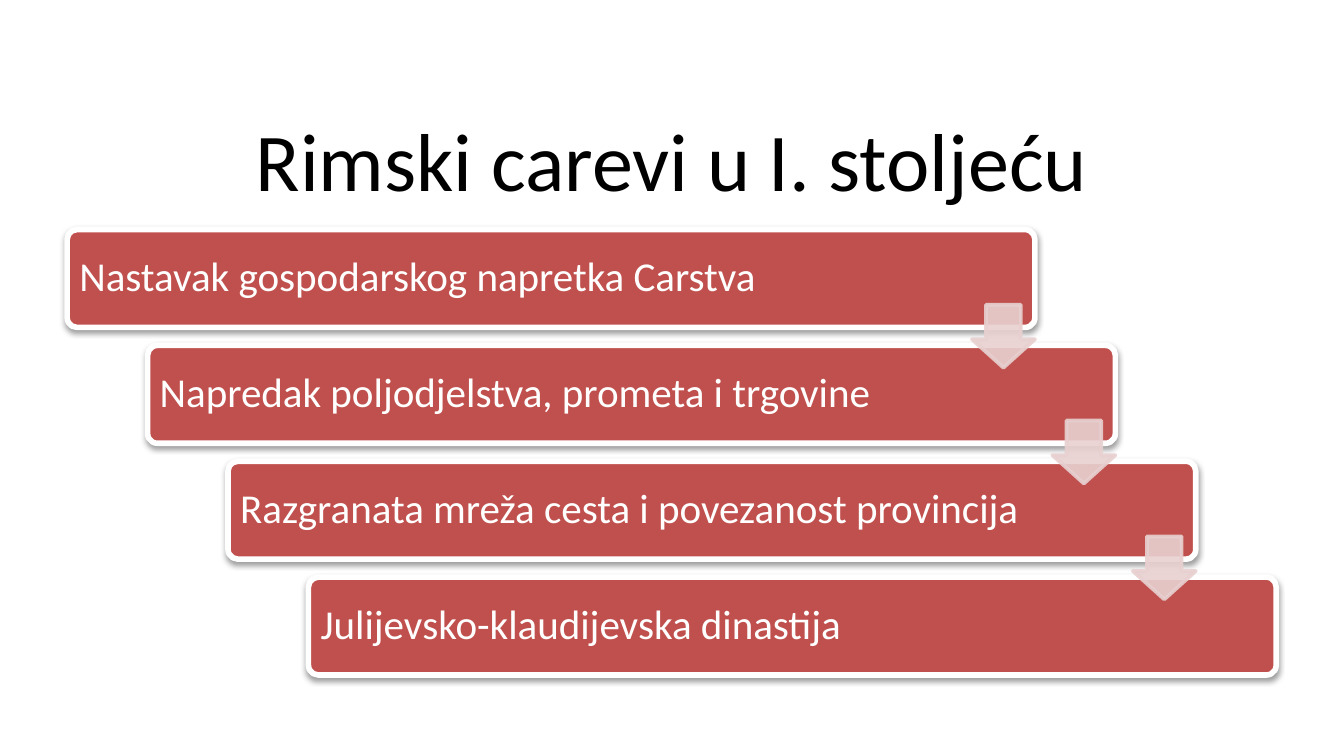
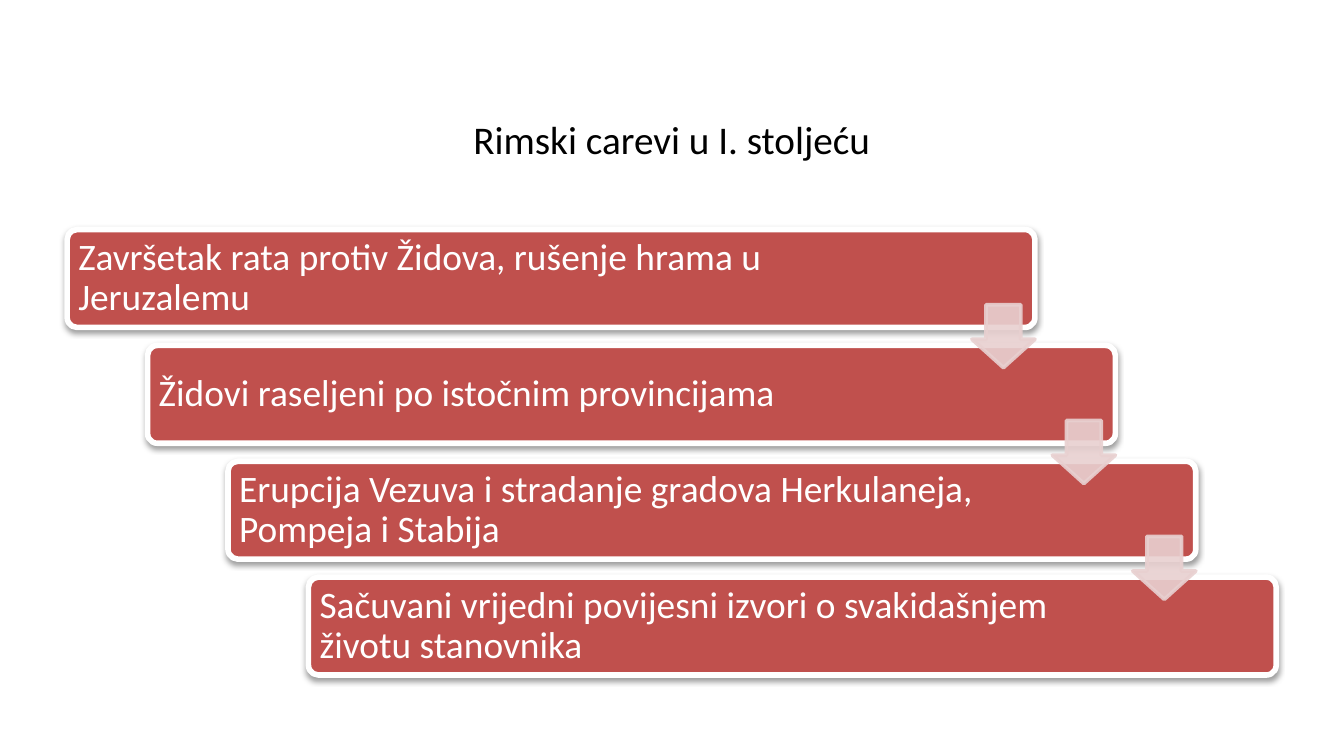
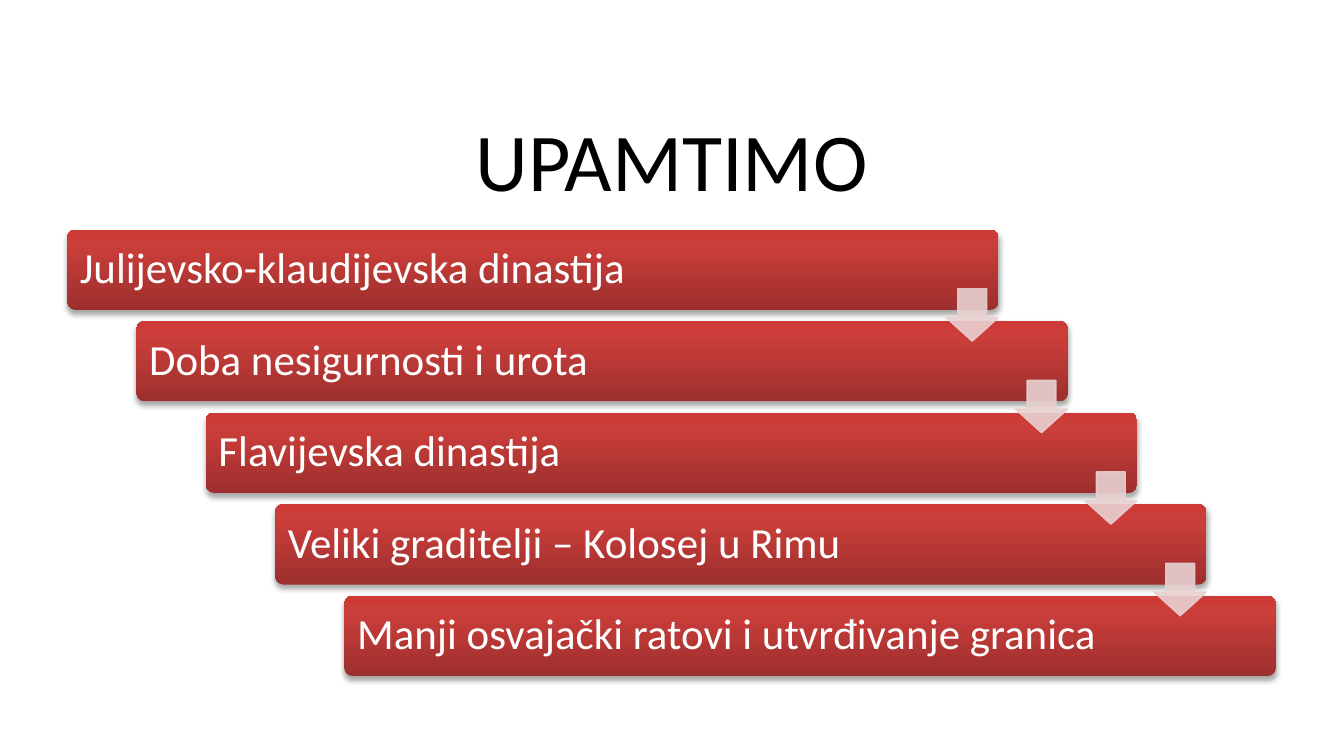
from copy import deepcopy

from lxml import etree
from pptx import Presentation
from pptx import util as u
from pptx.dml.color import RGBColor
from pptx.enum import shapes, text
from pptx.oxml.ns import qn

# Theme: colours, font and type sizes
THEME = {
    "font": "Calibri",
    "black": RGBColor.from_string("000000"),
    "white": RGBColor.from_string("FFFFFF"),
    "card": RGBColor.from_string("C0504D"),
    "arrow": RGBColor.from_string("E8D0D0"),
    "gradient": [(0, "9C2F2D"), (0.8, "CB3E3A"), (1, "CE3B37")],
    "title": 44,
    "small_title": 21,
}
LEFT, TOP = 1.27, 4.34

# Staircase styles (lengths in cm, line widths and shadows in points)
FRAMED = {
    "w": 18.29, "h": 1.85, "dx": 1.52, "dy": 2.19, "first_w": 16.23, "text_w": 15.56,
    "arrow": 1.19, "arrow_dy": 1.42, "arrow_line": 2,
    "gradient": False, "shadow_alpha": 38, "shadow_dist": 1.6,
}
GLOSSY = {
    "w": 17.6, "h": 1.52, "dx": 1.31, "dy": 1.73, "first_w": 15.88, "text_w": 15.29,
    "arrow": 0.99, "arrow_dy": 1.12, "arrow_line": 0.75,
    "gradient": True, "shadow_alpha": 35, "shadow_dist": 1.8,
}

# Slides: title, title size, space under the title, style, step size, step inset, steps
SLIDES = [
    ("Rimski carevi u I. stoljeću", THEME["title"], 0.13, FRAMED, 22, 0.23, [
        "Nastavak gospodarskog napretka Carstva",
        "Napredak poljodjelstva, prometa i trgovine",
        "Razgranata mreža cesta i povezanost provincija",
        "Julijevsko-klaudijevska dinastija",
    ]),
    ("Rimski carevi u I. stoljeću", THEME["small_title"], 0.99, FRAMED, 20, 0.21, [
        "Završetak rata protiv Židova, rušenje hrama u Jeruzalemu",
        "Židovi raseljeni po istočnim provincijama",
        "Erupcija Vezuva i stradanje gradova Herkulaneja, Pompeja i Stabija",
        "Sačuvani vrijedni povijesni izvori o svakidašnjem životu stanovnika",
    ]),
    ("UPAMTIMO", THEME["title"], 0.13, GLOSSY, 23, 0.24, [
        "Julijevsko-klaudijevska dinastija",
        "Doba nesigurnosti i urota",
        "Flavijevska dinastija",
        "Veliki graditelji – Kolosej u Rimu",
        "Manji osvajački ratovi i utvrđivanje granica",
    ]),
]


def add_text(s, box, words, size, color, align, insets):
    tf = s.shapes.add_textbox(*map(u.Cm, box)).text_frame
    tf.word_wrap = True
    tf.vertical_anchor = text.MSO_ANCHOR.MIDDLE
    tf.margin_left, tf.margin_top, tf.margin_right, tf.margin_bottom = map(u.Cm, insets)
    p = tf.paragraphs[0]
    p.text = words
    p.alignment = align
    p.line_spacing = 0.9
    r = p.runs[0]
    r.font.name = THEME["font"]
    r.font.size = u.Pt(size)
    r.font.color.rgb = color


def add_plain(s, kind, box, adjustments, color):
    sp = s.shapes.add_shape(kind, *map(u.Cm, box))
    sp.shadow.inherit = False
    for i, value in enumerate(adjustments):
        sp.adjustments[i] = value
    sp.fill.solid()
    sp.fill.fore_color.rgb = color
    return sp


prs = Presentation()
prs.slide_width, prs.slide_height = u.Cm(25.4), u.Cm(14.29)

for title, title_size, title_gap, style, size, inset, steps in SLIDES:
    s = prs.slides.add_slide(prs.slide_layouts[6])

    # Title
    add_text(s, (1.27, 2.13, 22.86, 1.98), title, title_size, THEME["black"],
             text.PP_ALIGN.CENTER, (0.25, 0.13, 0.25, title_gap))

    # Cards stepping down to the right
    for i, step in enumerate(steps):
        x, y = LEFT + i * style["dx"], TOP + i * style["dy"]
        sp = add_plain(s, shapes.MSO_SHAPE.ROUNDED_RECTANGLE,
                       (x, y, style["w"], style["h"]), [0.1], THEME["card"])
        spPr = sp.element.spPr
        if style["gradient"]:
            sp.line.fill.background()
            sp.fill.gradient()
            sp.fill.gradient_angle = 90
            stops = spPr.find(".//" + qn("a:gsLst"))
            stops.append(deepcopy(stops[-1]))
            for stop, (position, color) in zip(sp.fill.gradient_stops, THEME["gradient"]):
                stop.position = position
                stop.color.rgb = RGBColor.from_string(color)
        else:
            sp.line.color.rgb = THEME["white"]
            sp.line.width = u.Pt(3)

        # Soft shadow straight below the card
        shadow = etree.SubElement(
            spPr.find(qn("a:effectLst")), qn("a:outerShdw"), blurRad=str(u.Pt(3.1)),
            dist=str(u.Pt(style["shadow_dist"])), dir="5400000", rotWithShape="0")
        clr = etree.SubElement(shadow, qn("a:srgbClr"), val=str(THEME["black"]))
        etree.SubElement(clr, qn("a:alpha"), val=str(style["shadow_alpha"] * 1000))

        text_w = style["text_w"] if i else style["first_w"]
        add_text(s, (x, y, text_w, style["h"]), step, size, THEME["white"],
                 text.PP_ALIGN.LEFT, [inset] * 4)

    # Translucent arrows at the right end of every card but the last
    side = style["arrow"]
    for i in range(len(steps) - 1):
        x = LEFT + i * style["dx"] + style["w"] - side
        y = TOP + i * style["dy"] + style["arrow_dy"]
        sp = add_plain(s, shapes.MSO_SHAPE.DOWN_ARROW, (x, y, side, side),
                       [0.55, 0.45], THEME["arrow"])
        sp.line.color.rgb = THEME["arrow"]
        sp.line.width = u.Pt(style["arrow_line"])
        for clr in sp.element.spPr.findall(".//" + qn("a:srgbClr")):
            etree.SubElement(clr, qn("a:alpha"), val="90000")

prs.save("out.pptx")
